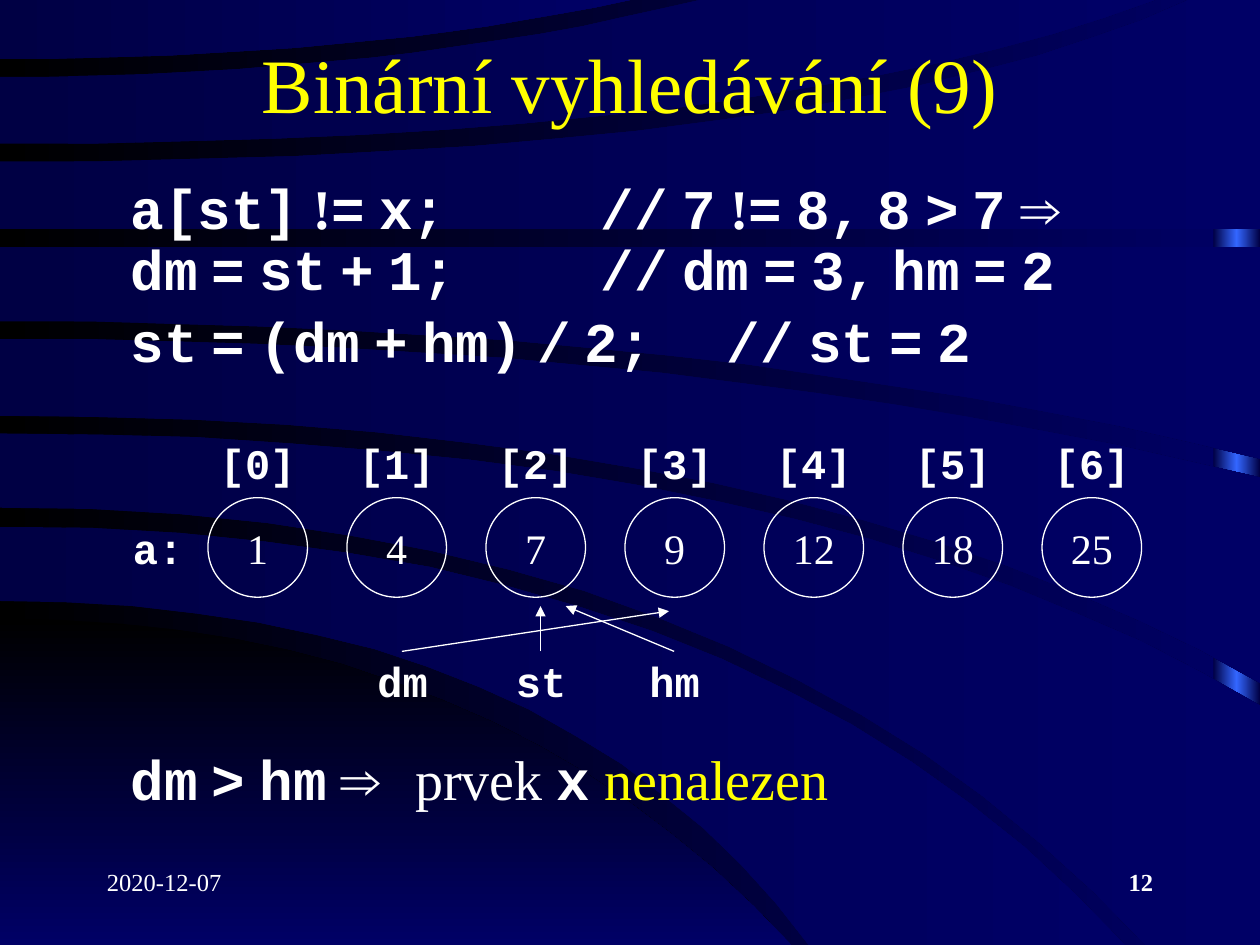
from copy import deepcopy
from dataclasses import dataclass

from lxml import etree
from pptx import Presentation
from pptx.dml.color import RGBColor as RGB
from pptx.enum.shapes import MSO_CONNECTOR as CONN, MSO_SHAPE as SHAPE
from pptx.enum.text import MSO_ANCHOR as ANCHOR, MSO_AUTO_SIZE as AUTO, PP_ALIGN as ALIGN
from pptx.oxml.ns import qn
from pptx.util import Inches, Pt


@dataclass(frozen=True)
class Theme:
    white: str = "FFFFFF"
    yellow: str = "FFFF00"
    black: str = "000000"
    navy: str = "000044"
    blue: str = "000066"
    glow: str = "3366FF"
    serif: str = "Times New Roman"
    mono: str = "Courier New"
    title: int = 44
    code: int = 32
    label: int = 24
    footer: int = 14


# Band edges: height at the left side, bend x, end x, end y (inches)
HILL = (4.91, 3.9, 6.28, 7.5), (7.5, 3, 6.28, 7.5)
BANDS = [
    ((4.18, 5.9, 8.93, 7.5), (4.77, 4.4, 6.42, 7.5)),
    ((3.44, 6.4, 10, 5.6), (4.03, 5.9, 9.09, 7.5)),
    ((2.69, 5.5, 10, 3.79), (3.3, 6.3, 10, 5.42)),
    ((1.96, 5, 10, 1.96), (2.55, 5.6, 10, 3.64)),
    ((1.28, 6.6, 9.43, 0), (1.82, 5, 10, 1.82)),
    ((0.61, 3.1, 5.56, 0), (1.14, 6.1, 9.17, 0)),
    ((0, 2.5, 5, 0), (0.47, 2.8, 5, 0)),
]


def edge_points(edge, steps=16):
    """Quadratic curve leaving the left side horizontally, in 1/100 inch."""
    y0, bend, x1, y1 = edge
    for i in range(steps + 1):
        t = i / steps
        yield (round(100 * (2 * t * (1 - t) * bend + t * t * x1)),
               round(100 * (y0 + t * t * (y1 - y0))))


class SlideBuilder:
    """Holds the theme and the current slide."""

    def __init__(self, prs, theme):
        self.theme = theme
        self.slide = prs.slides.add_slide(prs.slide_layouts[5])
        self.shapes = self.slide.shapes

    def gradient(self, fill, colors, angle=0):
        fill.gradient()
        fill.gradient_angle = angle
        for stop, color in zip(fill.gradient_stops, colors):
            stop.color.rgb = RGB.from_string(color)

    def background(self, *colors):
        self.gradient(self.slide.background.fill, colors)

    def band(self, edges, colors, angle=0):
        top, bottom = (list(edge_points(e)) for e in edges)
        near, far = sorted((top[-1], bottom[-1]))
        points = top + [(far[0], near[1])] + bottom[::-1]
        fb = self.shapes.build_freeform(*points[0], scale=Inches(0.01))
        fb.add_line_segments(points[1:], close=True)
        sp = fb.convert_to_shape()
        sp.shadow.inherit = False
        sp.line.fill.background()
        self.gradient(sp.fill, colors, angle)

    def glow_strip(self, x, y, w, h):
        t = self.theme
        sp = self.shapes.add_shape(SHAPE.RECTANGLE, *map(Inches, (x, y, w, h)))
        sp.shadow.inherit = False
        sp.line.fill.background()
        sp.fill.gradient()
        stops = sp._element.spPr.find(".//" + qn("a:gsLst"))
        stops.insert(1, deepcopy(stops[0]))
        sp.fill.gradient_stops[1].position = 0.5
        self.gradient(sp.fill, (t.navy, t.glow, t.navy))

    def run(self, p, text, size, font=None, color=None, bold=False):
        r = p.add_run()
        r.text = text
        r.font.size, r.font.bold = Pt(size), bold
        r.font.name = font or self.theme.serif
        r.font.color.rgb = RGB.from_string(color or self.theme.white)

    def title(self, text, x, y, w, h):
        sp = self.shapes.title
        sp.left, sp.top, sp.width, sp.height = map(Inches, (x, y, w, h))
        self.shapes._spTree.append(sp._element)  # bring in front of the bands
        tf = sp.text_frame
        tf.auto_size, tf.vertical_anchor = AUTO.NONE, ANCHOR.MIDDLE
        p = tf.paragraphs[0]
        p.alignment = ALIGN.CENTER
        self.run(p, text, self.theme.title, color=self.theme.yellow)

    def text(self, text, x, y, w, h, size, font=None, bold=False,
             align=ALIGN.CENTER, anchor=ANCHOR.MIDDLE):
        tf = self.shapes.add_textbox(*map(Inches, (x, y, w, h))).text_frame
        tf.word_wrap, tf.vertical_anchor = True, anchor
        p = tf.paragraphs[0]
        p.alignment = align
        self.run(p, text, size, font, bold=bold)

    def label(self, text, x, y, w=0.87):
        self.text(text, x, y, w, 0.79, self.theme.label, self.theme.mono, True)

    def code(self, paragraphs, x, y, w, h):
        """Each paragraph is lines of (text, font, bold, color) runs."""
        tf = self.shapes.add_textbox(*map(Inches, (x, y, w, h))).text_frame
        tf.word_wrap = True
        for i, lines in enumerate(paragraphs):
            p = tf.add_paragraph() if i else tf.paragraphs[0]
            p.line_spacing, p.space_before = 0.9, Pt(6.4)
            ppr = p._p.get_or_add_pPr()
            ppr.set("defTabSz", str(Inches(1)))
            tabs = etree.SubElement(ppr, qn("a:tabLst"))
            for pos in (4, 5):
                etree.SubElement(tabs, qn("a:tab"), pos=str(Inches(pos)), algn="l")
            for j, line in enumerate(lines):
                if j:
                    p.add_line_break()
                for text, font, bold, color in line:
                    self.run(p, text, self.theme.code, font, color, bold)

    def circle(self, text, x, y, d):
        sp = self.shapes.add_shape(SHAPE.OVAL, *map(Inches, (x, y, d, d)))
        sp.shadow.inherit = False
        sp.fill.background()
        sp.line.color.rgb, sp.line.width = RGB.from_string(self.theme.white), Pt(0.75)
        tf = sp.text_frame
        tf.word_wrap, tf.vertical_anchor = False, ANCHOR.MIDDLE
        p = tf.paragraphs[0]
        p.alignment = ALIGN.CENTER
        self.run(p, text, self.theme.label)

    def arrow(self, x1, y1, x2, y2):
        c = self.shapes.add_connector(CONN.STRAIGHT, *map(Inches, (x1, y1, x2, y2)))
        c.line.color.rgb, c.line.width = RGB.from_string(self.theme.white), Pt(0.75)
        ln = c._element.spPr.find(qn("a:ln"))
        etree.SubElement(ln, qn("a:tailEnd"), type="triangle")
        etree.SubElement(c._element.spPr, qn("a:effectLst"))


def code_runs(theme, source):
    """Monospaced words with narrow serif gaps and exclamation marks."""
    runs = [(" ", theme.mono, True, None)]
    for i, word in enumerate(source.split(" ")):
        if i:
            runs.append((" ", theme.serif, True, None))
        if word.startswith("!"):
            runs.append(("!", theme.serif, True, None))
            word = word[1:]
        runs.append((word, theme.serif if word == "⇒" else theme.mono, True, None))
    return runs


def main():
    prs = Presentation()
    prs.slide_width, prs.slide_height = Inches(10), Inches(7.5)
    t = Theme()
    s = SlideBuilder(prs, t)

    # Backdrop
    s.background(t.black, t.blue)
    s.glow_strip(9.63, 0, 0.37, 7.5)
    s.band(HILL, (t.black, t.blue), angle=270)
    for edges in BANDS:
        s.band(edges, (t.navy, t.blue))

    # Footer and title
    for text, x, bold, align in (("2020-12-07", 0.75, False, ALIGN.LEFT),
                                 ("12", 7.17, True, ALIGN.RIGHT)):
        s.text(text, x, 6.83, 2.08, 0.5, t.footer, bold=bold, align=align, anchor=ANCHOR.TOP)
    s.title("Binární vyhledávání (9)", 0.75, 0.2, 8.5, 0.92)

    # Search step
    step = [["a[st] != x;\t// 7 != 8, 8 > 7 ⇒", "dm = st + 1;\t// dm = 3, hm = 2"],
            ["st = (dm + hm) / 2;\t// st = 2"]]
    s.code([[code_runs(t, line) for line in lines] for lines in step], 0.67, 1.39, 8.75, 1.65)

    # Array with indices
    s.label("a:", 0.9, 3.95, 0.71)
    for i, value in enumerate((1, 4, 7, 9, 12, 18, 25)):
        x = 1.65 + 6.62 / 6 * i
        s.circle(str(value), x, 3.95, 0.79)
        s.label(f"[{i}]", x - 0.04, 3.28)

    # Pointers into the array
    for name, start, tip in (("dm", 3.19, (5.31, 4.85)),
                             ("st", 4.29, (4.29, 4.81)),
                             ("hm", 5.35, (4.49, 4.81))):
        s.label(name, start - 0.43, 5.01)
        s.arrow(start, 5.17, *tip)

    # Conclusion
    result = code_runs(t, "dm > hm ⇒") + [
        (" ", t.mono, True, None), ("prvek ", t.serif, False, None),
        ("x", t.mono, True, None), (" ", t.serif, True, None),
        ("nenalezen", t.serif, False, t.yellow)]
    s.code([[result]], 0.67, 5.92, 8.75, 0.79)

    prs.save("out.pptx")


if __name__ == "__main__":
    main()
